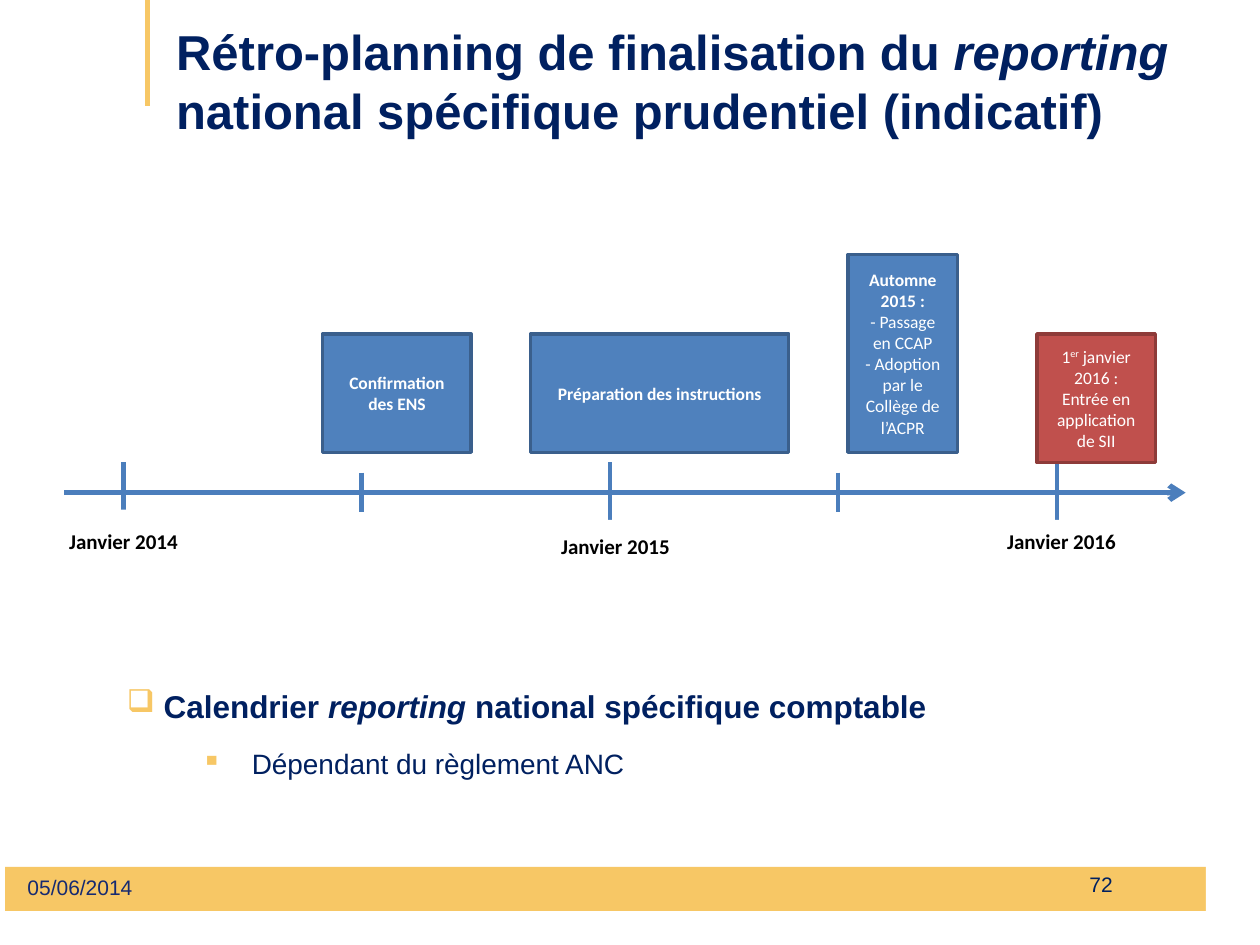
import pptx
import pptx.util
import pptx.dml.color
import pptx.enum.shapes
import pptx.enum.text
import lxml.etree

Inches, Pt = pptx.util.Inches, pptx.util.Pt
SHAPES = pptx.enum.shapes.MSO_SHAPE
ALIGN = pptx.enum.text.PP_ALIGN
ANCHOR = pptx.enum.text.MSO_ANCHOR
NAVY, GOLD, WHITE, BLUE, RED = "002060", "F7C765", "FFFFFF", "4F81BD", "C0504D"
AXIS, BLUE_EDGE, RED_EDGE = "4B7EBC", "3A5F8C", "8E3B39"


def colour(code):
    return pptx.dml.color.RGBColor.from_string(code)


def add_element(parent, tag, **attributes):
    element = lxml.etree.SubElement(parent, pptx.oxml.ns.qn(tag))
    for name, value in attributes.items():
        element.set(name, value)
    return element


class Slide:
    """Holds the style and the current page, with one method per kind of element."""

    def __init__(self, deck):
        self.page = deck.slides.add_slide(deck.slide_layouts[6])
        self.heading_font, self.label_font = "Arial", "Calibri"

    def spans(self, para, pieces, font, size, code):
        for text, style in pieces:
            span = para.add_run()
            span.text = text
            span.font.name, span.font.size = font, Pt(size)
            span.font.bold, span.font.italic = "b" in style, "i" in style
            span.font.color.rgb = colour(code)
            if "^" in style:
                span.font._element.set("baseline", "30000")

    def fill_text(self, box, paragraphs, font, size, code, align, anchor):
        frame = box.text_frame
        frame.word_wrap, frame.vertical_anchor = True, anchor
        for index, pieces in enumerate(paragraphs):
            para = frame.add_paragraph() if index else frame.paragraphs[0]
            para.alignment = align
            self.spans(para, pieces, font, size, code)

    def text(self, place, pieces, size, code=NAVY, align=ALIGN.LEFT, anchor=ANCHOR.MIDDLE):
        box = self.page.shapes.add_textbox(*map(Inches, place))
        self.fill_text(box, [pieces], self.heading_font, size, code, align, anchor)

    def bullets(self, place, items):
        box = self.page.shapes.add_textbox(*map(Inches, place))
        box.text_frame.word_wrap = True
        for index, (symbol, margin, hanging, size, pieces) in enumerate(items):
            para = box.text_frame.add_paragraph() if index else box.text_frame.paragraphs[0]
            para.level, para.line_spacing = index, 1.5
            if index:
                para.space_before = Pt(size * 0.2)
            properties = para._p.get_or_add_pPr()
            properties.set("marL", str(Inches(margin)))
            properties.set("indent", str(-Inches(hanging)))
            add_element(add_element(properties, "a:buClr"), "a:srgbClr", val=GOLD)
            add_element(properties, "a:buChar", char=symbol)
            self.spans(para, pieces, self.heading_font, size, NAVY)

    def shape(self, place, fill, edge=None, paragraphs=(), size=10, code=WHITE, kind=SHAPES.RECTANGLE):
        box = self.page.shapes.add_shape(kind, *map(Inches, place))
        box.shadow.inherit = False
        box.fill.solid()
        box.fill.fore_color.rgb = colour(fill)
        if edge:
            box.line.color.rgb = colour(edge)
            box.line.width = Pt(2)
        else:
            box.line.fill.background()
        self.fill_text(box, paragraphs, self.label_font, size, code, ALIGN.CENTER, ANCHOR.MIDDLE)

    def line(self, start, end, code, width, arrow=False):
        line = self.page.shapes.add_connector(
            pptx.enum.shapes.MSO_CONNECTOR.STRAIGHT, *map(Inches, start + end))
        line.line.color.rgb = colour(code)
        line.line.width = Pt(width)
        if arrow:
            add_element(line.line._get_or_add_ln(), "a:tailEnd", type="arrow")
        add_element(line._element.spPr, "a:effectLst")


def main():
    deck = pptx.Presentation()
    deck.slide_width, deck.slide_height = Inches(10), Inches(7.5)
    slide = Slide(deck)

    slide.shape((0.04, 6.88, 9.76, 0.35), GOLD)
    slide.line((1.17, 0), (1.17, 0.84), GOLD, 2.75)
    slide.shape((9.57, 6.74, 0.28, 0.66), WHITE)
    slide.text((1.3, 0.21, 8.7, 0.86), [
        ("Rétro-planning de finalisation du ", "b"), ("reporting", "bi"),
        (" national spécifique prudentiel (indicatif)", "b")], 28)
    slide.bullets((0.91, 5.25, 8.9, 0.71), [
        ("❑", 0.29, 0.29, 18, [("Calendrier ", "b"), ("reporting", "bi"),
                               (" national spécifique comptable", "b")]),
        ("▪", 0.99, 0.4, 16, [("Dépendant du règlement ANC", "")])])

    slide.line((0.51, 3.91), (9.41, 3.91), AXIS, 3, arrow=True)
    for x in (0.98, 4.84, 8.39):
        slide.line((x, 3.67), (x, 4.14), AXIS, 2.5)
    for x in (2.87, 6.65):
        slide.line((x, 3.75), (x, 4.06), AXIS, 2.5)
    for year, place in ((2014, (0.27, 4.06, 1.42, 0.47)),
                        (2015, (3.98, 4.14, 1.81, 0.39)),
                        (2016, (7.52, 4.14, 1.81, 0.31))):
        slide.shape(place, WHITE, WHITE, [[(f"Janvier {year}", "b")]], 12, "000000",
                    SHAPES.ROUNDED_RECTANGLE)

    milestones = [
        ((2.56, 2.65, 1.18, 0.94), BLUE, BLUE_EDGE, [[("Confirmation des ENS", "b")]]),
        ((4.21, 2.65, 2.05, 0.94), BLUE, BLUE_EDGE, [[("Préparation des instructions", "b")]]),
        ((6.73, 2.02, 0.87, 1.57), BLUE, BLUE_EDGE, [
            [("Automne 2015 :", "b")], [("- Passage en CCAP", "")],
            [("- Adoption par le Collège de l’ACPR", "")]]),
        ((8.23, 2.65, 0.94, 1.02), RED, RED_EDGE, [
            [("1", ""), ("er", "^"), (" janvier 2016 : Entrée en application de SII", "")]]),
    ]
    for milestone in milestones:
        slide.shape(*milestone)

    slide.text((0.12, 6.89, 2.33, 0.32), [("05/06/2014", "")], 12, "162A71", anchor=ANCHOR.TOP)
    slide.text((6.6, 6.82, 2.33, 0.4), [("72", "")], 12, align=ALIGN.RIGHT)
    deck.save("out.pptx")


if __name__ == "__main__":
    main()
